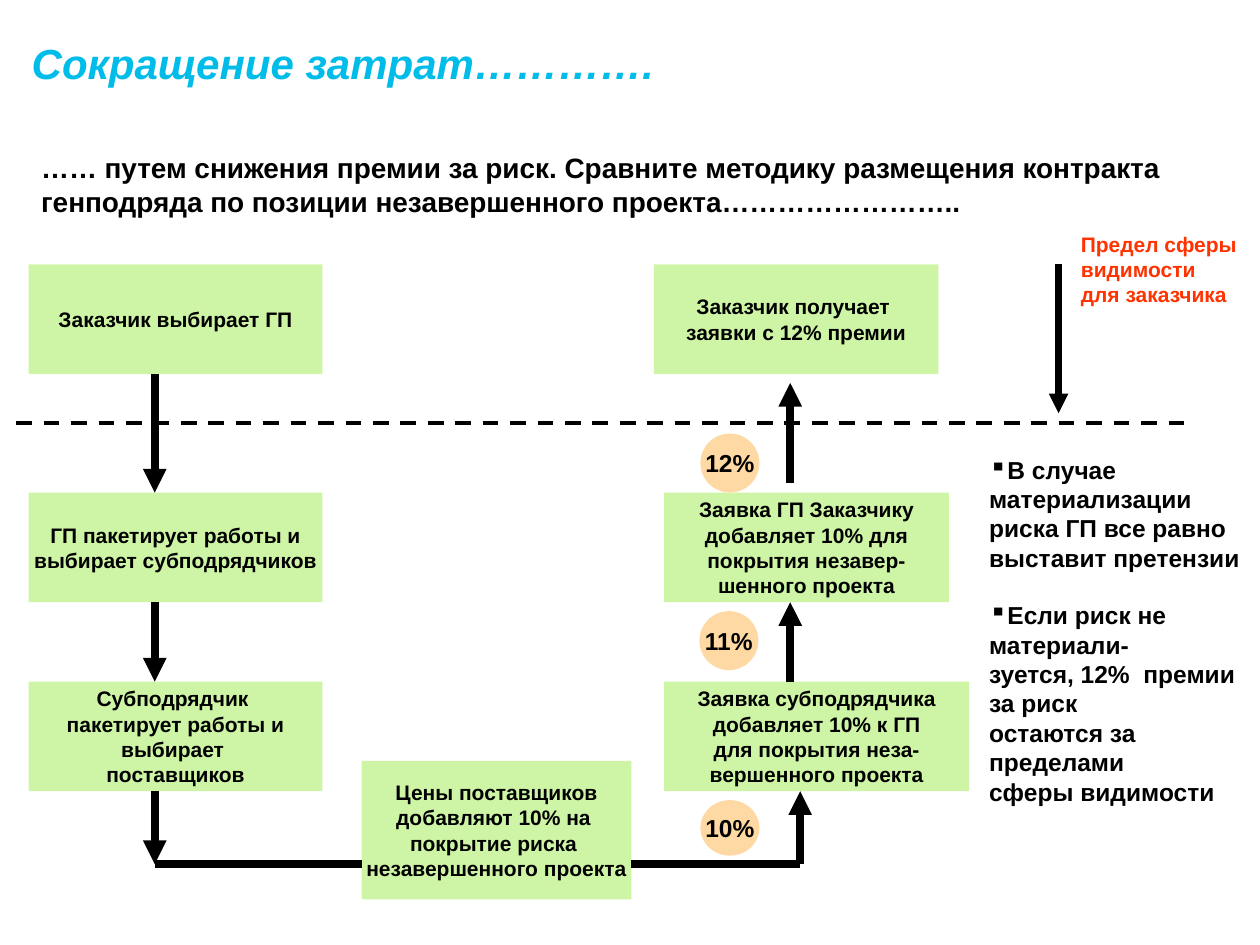
"""Build a slide on how risk premiums accumulate along the contracting chain."""
import copy

import pptx
import pptx.dml.color
import pptx.enum.dml
import pptx.enum.shapes
import pptx.enum.text
import pptx.oxml.ns
import pptx.util
from lxml import etree

Cm, Pt = pptx.util.Cm, pptx.util.Pt
RGBColor = pptx.dml.color.RGBColor
SHAPE = pptx.enum.shapes.MSO_SHAPE
ALIGN = pptx.enum.text.PP_ALIGN
ANCHOR = pptx.enum.text.MSO_ANCHOR
qn = pptx.oxml.ns.qn

BLACK = RGBColor(0x00, 0x00, 0x00)
WHITE = RGBColor(0xFF, 0xFF, 0xFF)
GREEN = RGBColor(0xCE, 0xF5, 0xA5)
PEACH = RGBColor(0xFE, 0xD9, 0xA3)
RED = RGBColor(0xFF, 0x33, 0x00)
CYAN = RGBColor(0x00, 0xBC, 0xE9)

TITLE = "Сокращение затрат…………."
INTRO = ("…… путем снижения премии за риск. Сравните методику размещения контракта "
         "генподряда по позиции незавершенного проекта……………………..")
LIMIT = "Предел сферы\nвидимости\nдля заказчика"
POINTS = ("В случае материализации\vриска ГП все равно\vвыставит претензии\n"
          "Если риск не материали-\vзуется, 12%  премии за риск\v"
          "остаются за пределами\vсферы видимости")

ROWS, BOX_H = (5.33, 9.93, 13.74), 2.21
LEFT_X, LEFT_W = 0.58, 5.92
DOWN_X, UP_X, TURN_X, BOTTOM_Y = 3.12, 15.93, 16.13, 17.42
LEFT_STEPS = [
    "Заказчик выбирает ГП",
    "ГП пакетирует работы и\nвыбирает субподрядчиков",
    "Субподрядчик \vпакетирует работы и\vвыбирает \vпоставщиков",
]
RIGHT_STEPS = [
    ("Заказчик получает \vзаявки с 12% премии", 13.18, 5.74),
    ("Заявка ГП Заказчику\vдобавляет 10% для\vпокрытия незавер-\vшенного проекта", 13.39, 5.74),
    ("Заявка субподрядчика\vдобавляет 10% к ГП\vдля покрытия неза-\vвершенного проекта", 13.39, 6.15),
]
SUPPLIERS = "Цены поставщиков\vдобавляют 10% на \vпокрытие риска \vнезавершенного проекта"
SUP_X, SUP_Y, SUP_W, SUP_H = 7.29, 15.34, 5.44, 2.79
PREMIUMS = [
    ("12%", (14.12, 8.74, 1.19, 1.19)),
    ("11%", (14.1, 12.32, 1.19, 1.19)),
    ("10%", (14.12, 16.13, 1.19, 1.12)),
]
BOTTOMS = [y + BOX_H for y in ROWS]
LINES = [
    ((21.34, ROWS[0], 21.34, 8.33), 3.75, True),
    ((DOWN_X, BOTTOMS[0], DOWN_X, ROWS[1]), 4.5, True),
    ((DOWN_X, BOTTOMS[1], DOWN_X, ROWS[2]), 4.5, True),
    ((DOWN_X, BOTTOMS[2], DOWN_X, BOTTOM_Y), 4.5, True),
    ((DOWN_X, BOTTOM_Y, SUP_X, BOTTOM_Y), 4.5, False),
    ((SUP_X + SUP_W, BOTTOM_Y, TURN_X, BOTTOM_Y), 4.5, False),
    ((TURN_X, BOTTOM_Y, TURN_X, BOTTOMS[2]), 4.5, True),
    ((UP_X, ROWS[2], UP_X, BOTTOMS[1]), 4.5, True),
    ((UP_X, 9.73, UP_X, 7.72), 4.5, True),
]


def write(sp, text, size, color=BLACK, align=ALIGN.LEFT, wrap=True, italic=False):
    tf = sp.text_frame
    tf.word_wrap = wrap
    tf.text = text
    style = {"name": "Arial", "size": Pt(size), "bold": True, "italic": italic}
    for p in tf.paragraphs:
        p.alignment = align
        for r in p.runs:
            for key, value in style.items():
                setattr(r.font, key, value)
            r.font.color.rgb = color
        for br in p._p.findall(qn("a:br")):
            br.append(copy.deepcopy(p.runs[0]._r.rPr))
    return tf


def add_text(s, box, *args, **kwargs):
    return write(s.shapes.add_textbox(*map(Cm, box)), *args, **kwargs)


def add_block(s, kind, box, fill, text, size, color=BLACK, align=ALIGN.CENTER):
    sp = s.shapes.add_shape(kind, *map(Cm, box))
    sp.shadow.inherit = False
    sp.fill.solid()
    sp.fill.fore_color.rgb = fill
    sp.line.fill.background()
    write(sp, text, size, color, align, wrap=False).vertical_anchor = ANCHOR.MIDDLE
    return sp


def add_line(s, ends, width, arrow=False):
    line = s.shapes.add_connector(pptx.enum.shapes.MSO_CONNECTOR.STRAIGHT, *map(Cm, ends))
    line.line.color.rgb = BLACK
    line.line.width = Pt(width)
    if arrow:
        etree.SubElement(line.line._get_or_add_ln(), qn("a:tailEnd"), type="triangle")
    etree.SubElement(line._element.spPr, qn("a:effectLst"))
    return line


def main():
    prs = pptx.Presentation()
    prs.slide_width, prs.slide_height = Cm(25.4), Cm(19.05)
    s = prs.slides.add_slide(prs.slide_layouts[6])

    tf = add_text(s, (0, 0.91, 24.33, 2.11), TITLE, 24, CYAN, italic=True)
    for side in ("left", "top", "right", "bottom"):
        setattr(tf, f"margin_{side}", 0)
    tf.paragraphs[0].line_spacing = 0.85
    tf.paragraphs[0]._p.get_or_add_pPr().set("marL", str(Cm(0.64)))
    add_text(s, (0.58, 2.92, 24.82, 1.63), INTRO, 16)

    for text, y in zip(LEFT_STEPS, ROWS):
        add_block(s, SHAPE.RECTANGLE, (LEFT_X, y, LEFT_W, BOX_H), GREEN, text, 12)
    for (text, x, w), y in zip(RIGHT_STEPS, ROWS):
        add_block(s, SHAPE.RECTANGLE, (x, y, w, BOX_H), GREEN, text, 12)
    add_block(s, SHAPE.RECTANGLE, (SUP_X, SUP_Y, SUP_W, SUP_H), GREEN, SUPPLIERS, 12)

    boundary = add_line(s, (0.33, 8.53, 23.93, 8.53), 2.25)
    boundary.line.dash_style = pptx.enum.dml.MSO_LINE.DASH
    for ends, width, arrow in LINES:
        add_line(s, ends, width, arrow)
    for text, box in PREMIUMS:
        add_block(s, SHAPE.OVAL, box, PEACH, text, 14)

    sp = add_block(s, SHAPE.RECTANGLE, (21.54, 4.72, 3.86, 1.4), WHITE, LIMIT, 12, RED, ALIGN.LEFT)
    sp.line.color.rgb = WHITE
    sp.line.width = Pt(0.75)

    tf = add_text(s, (19.69, 9.04, 5.71, 7.44), POINTS, 14)
    for p in tf.paragraphs:
        etree.SubElement(p._p.get_or_add_pPr(), qn("a:buChar"), char="▪")
    tf.paragraphs[1].space_before = Pt(16)

    prs.save("out.pptx")


if __name__ == "__main__":
    main()
